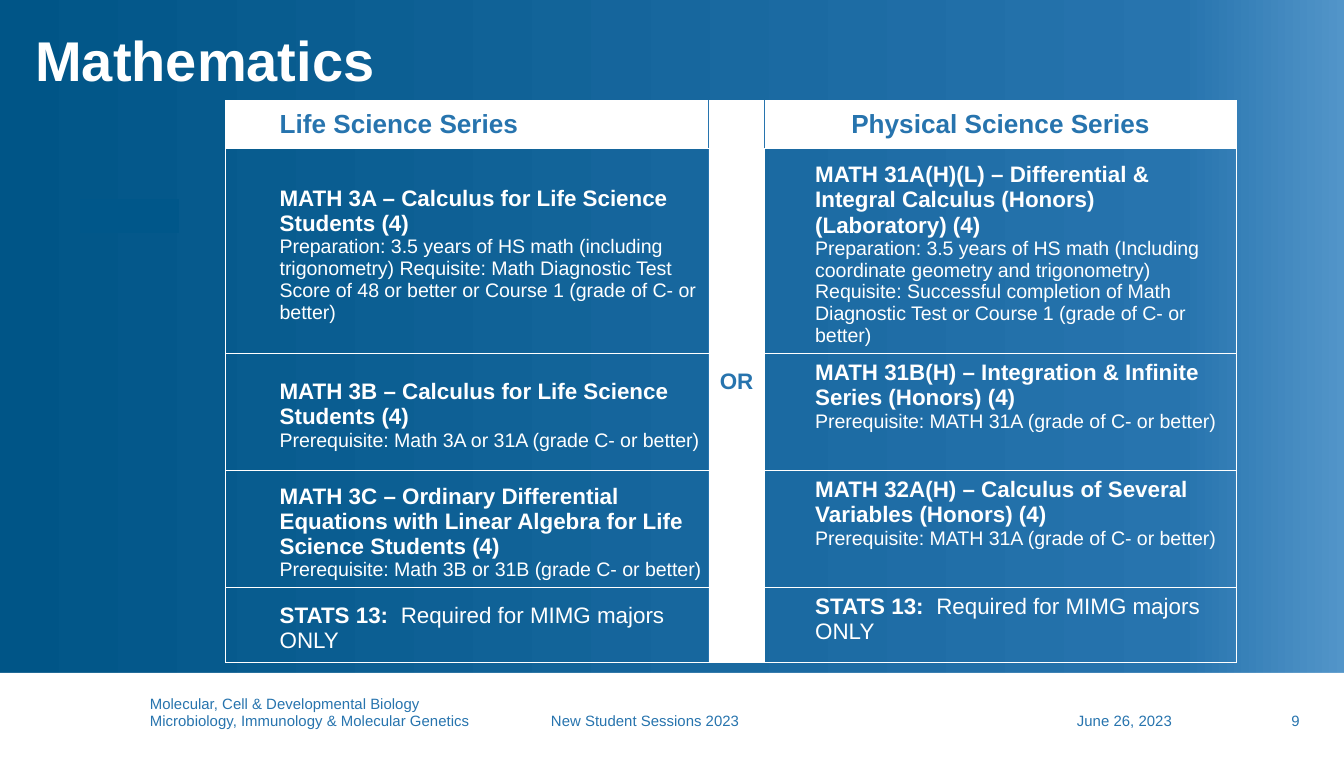
from copy import deepcopy

from lxml.etree import SubElement
from pptx import Presentation
from pptx.dml.color import RGBColor
from pptx.enum.shapes import MSO_SHAPE
from pptx.enum.text import MSO_ANCHOR, PP_ALIGN
from pptx.oxml.ns import qn
from pptx.util import Pt

WHITE = RGBColor(0xFF, 0xFF, 0xFF)
BLUE = RGBColor(0x27, 0x74, 0xAE)
DARK_BLUE = RGBColor(0x00, 0x55, 0x87)
LIGHT_BLUE = RGBColor(0x52, 0x95, 0xC9)
ACCENT_BLUE = RGBColor(0x00, 0x57, 0x8A)
FONT = "Arial"

SLIDE_WIDTH = 720
SLIDE_HEIGHT = 405.38
FOOTER_TOP = 360.3
COLUMN_WIDTHS = [258.5, 30.2, 252.7]
ROW_HEIGHTS = [25.8, 62.6, 62.6, 62.6, 40.3]
COURSE_SIZE = 12
DETAIL_SIZE = 10.5

LIFE_COURSES = [
    ("MATH 3A – Calculus for Life Science Students (4)",
     ["Preparation: 3.5 years of HS math (including trigonometry) Requisite: "
      "Math Diagnostic Test Score of 48 or better or Course 1 (grade of C- or better)"]),
    ("MATH 3B – Calculus for Life Science Students (4)",
     ["Prerequisite: Math 3A or 31A (grade C- or better)"]),
    ("MATH 3C – Ordinary Differential Equations with Linear Algebra for Life Science Students (4)",
     ["Prerequisite: Math 3B or 31B (grade C- or better)"]),
]
PHYSICAL_COURSES = [
    ("MATH 31A(H)(L) – Differential & Integral Calculus (Honors)  (Laboratory) (4)",
     ["Preparation: 3.5 years of HS math (Including coordinate geometry and trigonometry)",
      "Requisite: Successful completion of Math Diagnostic Test or Course 1 (grade of C- or better)"]),
    ("MATH 31B(H) – Integration & Infinite Series (Honors) (4)",
     ["Prerequisite: MATH 31A (grade of C- or better)"]),
    ("MATH 32A(H) – Calculus of Several Variables (Honors) (4)",
     ["Prerequisite: MATH 31A (grade of C- or better)"]),
]
STATS_RUNS = [("STATS 13:  ", COURSE_SIZE, True),
              ("Required for MIMG majors ONLY", COURSE_SIZE, False)]


def write_runs(paragraph, runs, color):
    for text, size, bold in runs:
        run = paragraph.add_run()
        run.text = text
        run.font.name = FONT
        run.font.size = Pt(size)
        run.font.bold = bold
        run.font.color.rgb = color


def set_margins(target, left, top, right, bottom):
    target.margin_left, target.margin_top = Pt(left), Pt(top)
    target.margin_right, target.margin_bottom = Pt(right), Pt(bottom)


def add_text(slide, box, lines, size, color, bold=False, align=PP_ALIGN.LEFT,
             anchor=MSO_ANCHOR.BOTTOM, margins=(0, 0.7, 7.2, 0.7), spacing=1.0):
    frame = slide.shapes.add_textbox(*map(Pt, box)).text_frame
    frame.word_wrap = True
    frame.vertical_anchor = anchor
    set_margins(frame, *margins)
    for index, line in enumerate(lines):
        paragraph = frame.add_paragraph() if index else frame.paragraphs[0]
        paragraph.alignment = align
        paragraph.line_spacing = spacing
        write_runs(paragraph, [(line, size, bold)], color)


def add_rectangle(slide, box, color, outlined=False):
    shape = slide.shapes.add_shape(MSO_SHAPE.RECTANGLE, *map(Pt, box))
    shape.shadow.inherit = False
    shape.fill.solid()
    shape.fill.fore_color.rgb = color
    if outlined:
        shape.line.color.rgb = color
        shape.line.width = Pt(0.5)
    else:
        shape.line.fill.background()


def set_background(slide):
    fill = slide.background.fill
    fill.gradient()
    fill.gradient_angle = 0
    stop_list = next(slide.element.iter(qn("a:gsLst")))
    stop_list.insert(1, deepcopy(stop_list[0]))
    stops = zip(fill.gradient_stops, (0, 0.88, 1), (DARK_BLUE, BLUE, LIGHT_BLUE))
    for stop, position, color in stops:
        stop.position = position
        stop.color.rgb = color


def set_borders(cell, left=WHITE, right=WHITE):
    properties = cell._tc.get_or_add_tcPr()
    colors = {"a:lnL": left, "a:lnR": right, "a:lnT": WHITE, "a:lnB": WHITE}
    for index, (tag, color) in enumerate(colors.items()):
        line = SubElement(properties, qn(tag), w=str(Pt(0.5)))
        SubElement(SubElement(line, qn("a:solidFill")), qn("a:srgbClr"), val=str(color))
        properties.insert(index, line)


def fill_cell(cell, paragraphs, color, margins, align=PP_ALIGN.LEFT,
              anchor=MSO_ANCHOR.MIDDLE, indent=0):
    set_margins(cell, *margins)
    cell.vertical_anchor = anchor
    frame = cell.text_frame
    for index, runs in enumerate(paragraphs):
        paragraph = frame.add_paragraph() if index else frame.paragraphs[0]
        paragraph.alignment = align
        if indent:
            paragraph.level = 1
            properties = paragraph._p.get_or_add_pPr()
            properties.set("marL", str(Pt(indent)))
            properties.set("indent", "0")
        write_runs(paragraph, runs, color)


def course_paragraphs(courses):
    cells = [[[(name, COURSE_SIZE, True)]] + [[(detail, DETAIL_SIZE, False)] for detail in details]
             for name, details in courses]
    return cells + [[STATS_RUNS]]


def add_course_table(slide, left, top, width, height):
    table = slide.shapes.add_table(len(ROW_HEIGHTS), len(COLUMN_WIDTHS),
                                   Pt(left), Pt(top), Pt(width), Pt(height)).table
    table.first_row = False
    table.horz_banding = False
    for column, column_width in zip(table.columns, COLUMN_WIDTHS):
        column.width = Pt(column_width)
    for row, row_height in zip(table.rows, ROW_HEIGHTS):
        row.height = Pt(row_height)

    for row_index in range(len(ROW_HEIGHTS)):
        inner = WHITE if row_index else BLUE
        for column_index, sides in enumerate([(WHITE, inner), (inner, inner), (inner, WHITE)]):
            cell = table.cell(row_index, column_index)
            set_margins(cell, 0, 0, 0, 0)
            if row_index == 0 or column_index == 1:
                cell.fill.solid()
                cell.fill.fore_color.rgb = WHITE
            else:
                cell.fill.background()
            set_borders(cell, *sides)

    fill_cell(table.cell(0, 0), [[("Life Science Series", 14, True)]], BLUE, (28.8, 0, 0, 0))
    fill_cell(table.cell(0, 2), [[("Physical Science Series", 14, True)]], BLUE,
              (0, 0, 0, 0), PP_ALIGN.CENTER)
    table.cell(0, 1).merge(table.cell(len(ROW_HEIGHTS) - 1, 1))
    fill_cell(table.cell(0, 1), [[("OR", 12, True)]], BLUE, (0, 0, 0, 0), PP_ALIGN.CENTER)

    series = zip(course_paragraphs(LIFE_COURSES), course_paragraphs(PHYSICAL_COURSES))
    for row_index, (life, physical) in enumerate(series, start=1):
        fill_cell(table.cell(row_index, 0), life, WHITE, (28.8, 3.6, 0, 0))
        anchor = MSO_ANCHOR.MIDDLE if row_index == 1 else MSO_ANCHOR.TOP
        fill_cell(table.cell(row_index, 2), physical, WHITE, (0, 3.6, 0, 0),
                  anchor=anchor, indent=27)


def add_footer(slide, left, top, width, height):
    add_rectangle(slide, (left, top, width, height), WHITE)
    departments = ["Molecular, Cell & Developmental Biology",
                   "Microbiology, Immunology & Molecular Genetics"]
    add_text(slide, (left + 80.3, top + 11.3, 208.8, 20), departments, 8, BLUE)
    add_text(slide, (left + 295.2, top + 20, 230.4, 11), ["New Student Sessions 2023"], 8, BLUE)
    for offset, box_width, text in [(527, 108, "June 26, 2023"), (640.8, 62.6, "9")]:
        add_text(slide, (left + offset, top + 20, box_width, 11), [text], 8, BLUE,
                 align=PP_ALIGN.RIGHT, margins=(7.2, 0.7, 7.2, 0.7))


def add_title(slide, left, top, width, height):
    add_text(slide, (left, top, width, height), ["Mathematics"], 30, WHITE, bold=True,
             anchor=MSO_ANCHOR.TOP, margins=(7.2, 3.6, 7.2, 3.6), spacing=0.9)


def main():
    presentation = Presentation()
    presentation.slide_width = Pt(SLIDE_WIDTH)
    presentation.slide_height = Pt(SLIDE_HEIGHT)
    slide = presentation.slides.add_slide(presentation.slide_layouts[6])
    set_background(slide)
    add_footer(slide, 0, FOOTER_TOP, SLIDE_WIDTH, SLIDE_HEIGHT - FOOTER_TOP)
    add_title(slide, 11.9, 14.4, 576, 40.3)
    add_course_table(slide, 121, 53.8, sum(COLUMN_WIDTHS), sum(ROW_HEIGHTS))
    add_rectangle(slide, (43.2, 106.6, 52.6, 18), ACCENT_BLUE, outlined=True)
    presentation.save("out.pptx")


if __name__ == "__main__":
    main()
